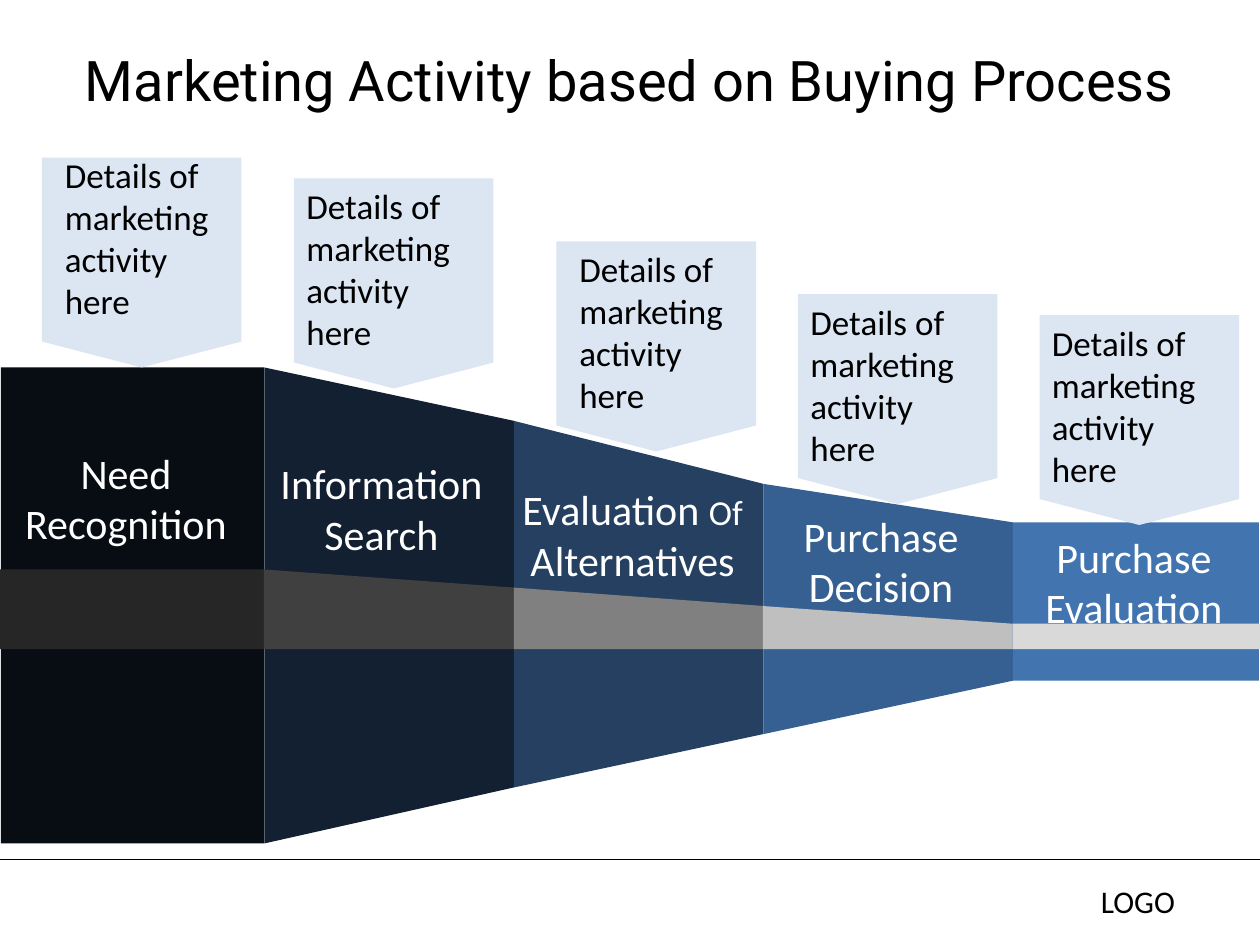
import pptx
import pptx.util
import pptx.dml.color
import pptx.enum.shapes
import pptx.enum.text
import lxml.etree

Pt = pptx.util.Pt
RGB = pptx.dml.color.RGBColor
SHAPE = pptx.enum.shapes.MSO_SHAPE
ALIGN = pptx.enum.text.PP_ALIGN
ANCHOR = pptx.enum.text.MSO_ANCHOR

BLACK = RGB(0x00, 0x00, 0x00)
WHITE = RGB(0xFF, 0xFF, 0xFF)
CALLOUT = RGB(0xDC, 0xE6, 0xF2)
FUNNEL = [RGB.from_string(c) for c in ("070D13", "122031", "254061", "376092", "4274AF")]
BAND = [RGB.from_string(c) for c in ("262626", "404040", "808080", "BFBFBF", "D9D9D9")]

prs = pptx.Presentation()
prs.slide_width, prs.slide_height = Pt(720), Pt(540)
s = prs.slides.add_slide(prs.slide_layouts[6])


def add_text(box, runs, color, align=ALIGN.LEFT, font="Calibri", anchor=ANCHOR.TOP):
    tf = s.shapes.add_textbox(*map(Pt, box)).text_frame
    frame_format = {"word_wrap": True, "vertical_anchor": anchor}
    for name, value in frame_format.items():
        setattr(tf, name, value)
    p = tf.paragraphs[0]
    p.alignment = align
    for text, size in runs:
        r = p.add_run()
        r.text = text
        for name, value in {"name": font, "size": Pt(size)}.items():
            setattr(r.font, name, value)
        r.font.color.rgb = color


def add_strip(xs, tops, bottoms, colors):
    """Draw one segment per pair of neighbouring edges."""
    for i, color in enumerate(colors):
        x1, x2 = xs[i], xs[i + 1]
        if tops[i] == tops[i + 1]:
            sp = s.shapes.add_shape(SHAPE.RECTANGLE, Pt(x1), Pt(tops[i]),
                                    Pt(x2 - x1), Pt(bottoms[i] - tops[i]))
        else:
            fb = s.shapes.build_freeform(Pt(x1), Pt(tops[i]))
            corners = [(x2, tops[i + 1]), (x2, bottoms[i + 1]), (x1, bottoms[i])]
            fb.add_line_segments([(Pt(x), Pt(y)) for x, y in corners])
            sp = fb.convert_to_shape()
        sp.shadow.inherit = False
        sp.fill.solid()
        sp.fill.fore_color.rgb = color
        sp.line.fill.background()


# Footer line and label
line = s.shapes.add_connector(pptx.enum.shapes.MSO_CONNECTOR.STRAIGHT,
                              Pt(0), Pt(491), Pt(720), Pt(491))
line.line.color.rgb = BLACK
line.line.width = Pt(0.75)
lxml.etree.SubElement(line._element.spPr, pptx.oxml.ns.qn("a:effectLst"))
add_text((622, 500.4, 80, 29), [("LOGO", 18)], BLACK)

# Funnel and the grey band across it
add_strip([0.5, 151, 293.6, 436.2, 578.8, 719.3],
          [210, 210, 240.5, 276.5, 298.5, 298.5],
          [482, 482, 450, 419.5, 389, 389], FUNNEL)
add_strip([0, 150.8, 293.6, 436, 578.6, 720],
          [325.4, 325.4, 335.8, 346.3, 356.4, 356.4],
          [371] * 6, BAND)

# Stage names
stages = [
    (0, 252, [("Need Recognition", 24)]),
    (146, 258, [("Information Search", 24)]),
    (289.5, 273, [("Evaluation ", 24), ("Of ", 20), ("Alternatives", 24)]),
    (431.5, 288, [("Purchase Decision", 24)]),
    (576, 300, [("Purchase Evaluation", 24)]),
]
for x, y, runs in stages:
    add_text((x, y, 144, 65.5), runs, WHITE, ALIGN.CENTER)

# Title
add_text((36, 0, 648, 90), [("Marketing Activity based on Buying Process", 32)],
         BLACK, ALIGN.CENTER, "Roboto", ANCHOR.MIDDLE)

# Callouts pointing down: arrow corner, then text corner
callouts = [
    (21, 93, 30, 84),
    (165, 105, 168, 102),
    (315, 141, 324, 138),
    (453, 171, 456, 168),
    (591, 183, 594, 180),
]
for x, y, text_x, text_y in callouts:
    sp = s.shapes.add_shape(SHAPE.PENTAGON, Pt(x), Pt(y), Pt(120), Pt(114))
    sp.rotation = 90
    sp.adjustments[0] = 0.13
    sp.shadow.inherit = False
    sp.fill.solid()
    sp.fill.fore_color.rgb = CALLOUT
    sp.line.fill.background()
    add_text((text_x, text_y, 108, 104.5),
             [("Details of marketing activity here", 20)], BLACK)

prs.save("out.pptx")
